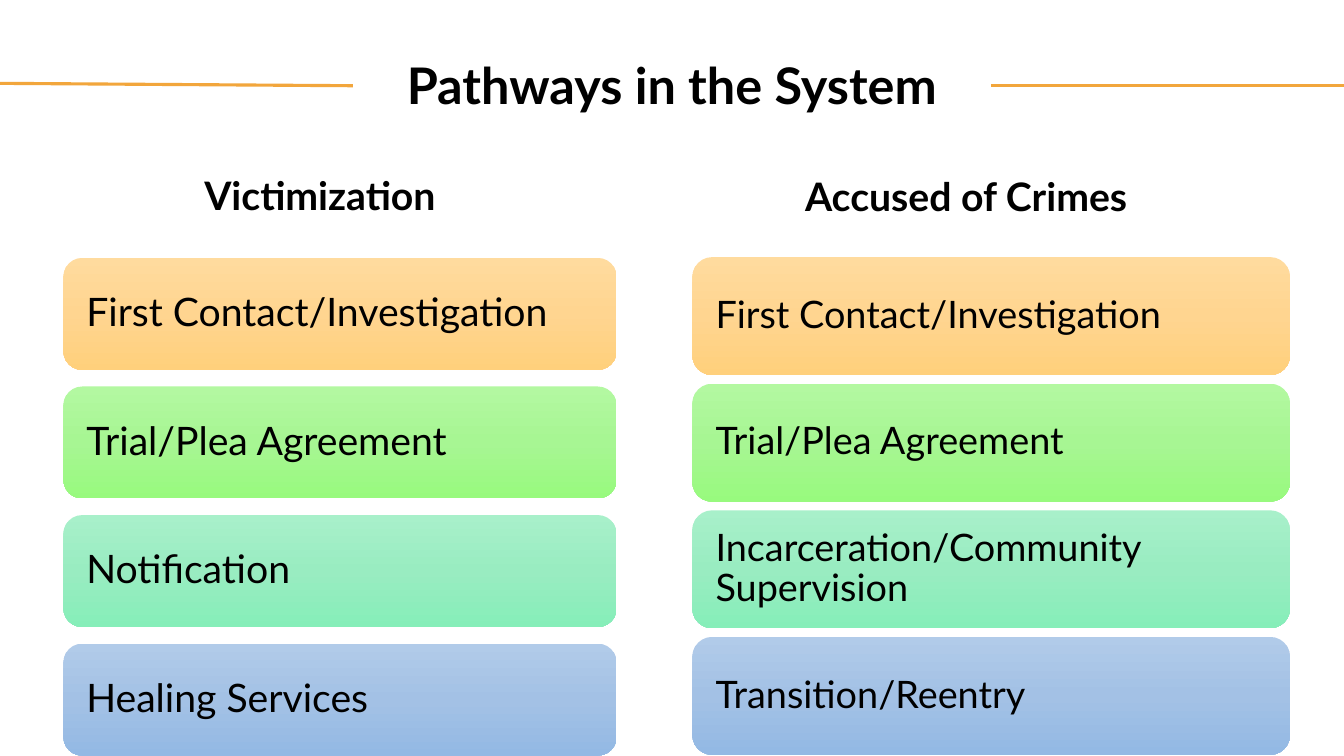
import copy

import pptx
import pptx.dml.color
import pptx.enum.shapes
import pptx.enum.text
import pptx.oxml.ns
import pptx.util
from pptx.util import Cm

FONT = "Lato"
GRADIENTS = [
    ("FFDB9E", "FFD590", "FFD07C"),
    ("B3F8A1", "A7F693", "98FA7E"),
    ("A8F0CA", "99ECC1", "86EEB9"),
    ("B1CBE9", "A3C1E5", "93B9E4"),
]
VICTIM_STEPS = [
    "First Contact/Investigation",
    "Trial/Plea Agreement",
    "Notification",
    "Healing Services",
]
ACCUSED_STEPS = [
    "First Contact/Investigation",
    "Trial/Plea Agreement",
    "Incarceration/Community Supervision",
    "Transition/Reentry",
]


def color(hex_string):
    return pptx.dml.color.RGBColor.from_string(hex_string)


def write_text(shape, text, size, bold, alignment, line_spacing=1.0):
    shape.text_frame.word_wrap = True
    paragraph = shape.text_frame.paragraphs[0]
    paragraph.text = text
    paragraph.alignment = alignment
    paragraph.line_spacing = line_spacing
    paragraph.font.name = FONT
    paragraph.font.size = pptx.util.Pt(size)
    paragraph.font.bold = bold
    paragraph.font.color.rgb = color("000000")


def set_title(slide, text):
    title = slide.shapes.title
    title.left, title.top, title.width, title.height = Cm(8.89), Cm(0.38), Cm(16.08), Cm(3.68)
    title.text_frame.vertical_anchor = pptx.enum.text.MSO_ANCHOR.MIDDLE
    write_text(title, text, 36, True, pptx.enum.text.PP_ALIGN.CENTER, 0.9)


def add_rule(slide, start_x, start_y, end_x, end_y):
    rule = slide.shapes.add_connector(
        pptx.enum.shapes.MSO_CONNECTOR.STRAIGHT, Cm(start_x), Cm(start_y), Cm(end_x), Cm(end_y)
    )
    rule.line.color.rgb = color("F2A63C")
    rule.line.width = pptx.util.Pt(2.25)
    properties = rule._element.spPr
    properties.append(properties.makeelement(pptx.oxml.ns.qn("a:effectLst"), {}))


def add_heading(slide, text, left, top, width):
    heading = slide.shapes.add_textbox(Cm(left), Cm(top), Cm(width), Cm(1.45))
    write_text(heading, text, 28, True, pptx.enum.text.PP_ALIGN.LEFT)


def fill_gradient(shape, hex_strings):
    shape.fill.gradient()
    shape.fill.gradient_angle = 270
    stop_list = shape._element.spPr.find(".//" + pptx.oxml.ns.qn("a:gsLst"))
    stop_list.insert(1, copy.deepcopy(stop_list[0]))
    for index, stop in enumerate(shape.fill.gradient_stops):
        stop.position = index / 2
        stop.color.rgb = color(hex_strings[index])


def add_step(slide, text, gradient, left, top, width, height, size):
    step = slide.shapes.add_shape(
        pptx.enum.shapes.MSO_SHAPE.ROUNDED_RECTANGLE, Cm(left), Cm(top), Cm(width), Cm(height)
    )
    step.shadow.inherit = False
    step.line.fill.background()
    fill_gradient(step, gradient)
    frame = step.text_frame
    frame.margin_left = frame.margin_right = Cm(0.44)
    frame.vertical_anchor = pptx.enum.text.MSO_ANCHOR.MIDDLE
    write_text(step, text, size, False, pptx.enum.text.PP_ALIGN.LEFT, 0.9)


def add_pathway(slide, steps, left, top, width, height, pitch, size):
    for index, (text, gradient) in enumerate(zip(steps, GRADIENTS)):
        add_step(slide, text, gradient, left, top + index * pitch, width, height, size)


def main():
    presentation = pptx.Presentation()
    presentation.slide_width = Cm(33.87)
    presentation.slide_height = Cm(19.05)
    slide = presentation.slides.add_slide(presentation.slide_layouts[5])
    add_rule(slide, 0, 2.1, 8.89, 2.16)
    add_rule(slide, 24.97, 2.16, 33.87, 2.16)
    set_title(slide, "Pathways in the System")
    add_heading(slide, "Victimization", 4.9, 4.19, 7.34)
    add_pathway(slide, VICTIM_STEPS, 1.6, 6.5, 13.94, 2.82, 3.24, 28)
    add_heading(slide, "Accused of Crimes", 20.04, 4.22, 9.88)
    add_pathway(slide, ACCUSED_STEPS, 17.45, 6.48, 15.06, 2.97, 3.19, 27)
    presentation.save("out.pptx")


if __name__ == "__main__":
    main()
